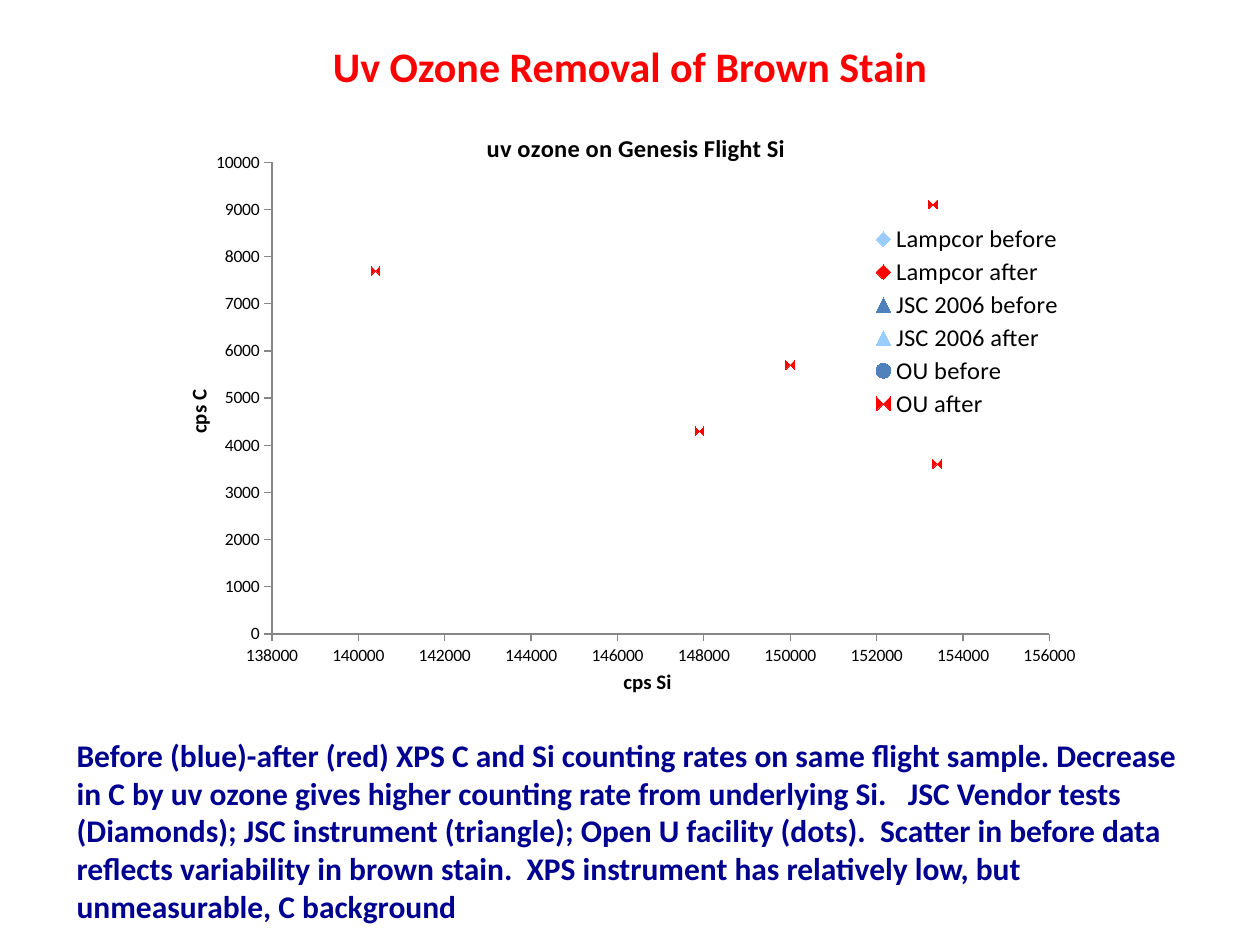
import pptx
import pptx.chart.data
import pptx.dml.color
import pptx.enum.chart
import pptx.enum.text
import pptx.oxml
import pptx.oxml.ns
import pptx.util

Inches = pptx.util.Inches
Pt = pptx.util.Pt
qn = pptx.oxml.ns.qn
Marker = pptx.enum.chart.XL_MARKER_STYLE

RED, BLUE, PALE_BLUE = "FF0000", "4F81BD", "99CCFF"
NAVY, BLACK, GRAY = "000090", "000000", "878787"

SERIES = [
    ("Lampcor before", Marker.DIAMOND, 11, PALE_BLUE, [(18000, 18000), (33000, 33000)]),
    ("Lampcor after", Marker.DIAMOND, 9, RED,
     [(42000, 16000), (42000, 15000), (46000, 15000), (46000, 14000)]),
    ("JSC 2006 before", Marker.TRIANGLE, 11, BLUE, [(51000, 63000)]),
    ("JSC 2006 after", Marker.TRIANGLE, 9, PALE_BLUE, [(99000, 11000)]),
    ("OU before", Marker.CIRCLE, 9, BLUE, [(98000, 65000), (131000, 20000)]),
    ("OU after", Marker.AUTOMATIC, 5, RED,
     [(153300, 9100), (153400, 3600), (140400, 7700), (147900, 4300), (150000, 5700)]),
]

BODY = (
    "Before (blue)-after (red) XPS C and Si counting rates on same flight sample. "
    "Decrease in C by uv ozone gives higher counting rate from underlying Si.   "
    "JSC Vendor tests (Diamonds); JSC instrument (triangle); Open U facility (dots).  "
    "Scatter in before data reflects variability in brown stain.  "
    "XPS instrument has relatively low, but unmeasurable, C background"
)


def rgb(value):
    return pptx.dml.color.RGBColor.from_string(value)


def set_layout(parent, x, y, w=None, h=None, inner=False):
    for old in parent.findall(qn("c:layout")):
        parent.remove(old)
    tags = [("layoutTarget", "inner")] if inner else []
    tags += [("xMode", "edge"), ("yMode", "edge")]
    tags += [(k, v) for k, v in zip("xywh", (x, y, w, h)) if v is not None]
    items = "".join(f'<c:{k} val="{v}"/>' for k, v in tags)
    layout = pptx.oxml.parse_xml(
        f'<c:layout {pptx.oxml.ns.nsdecls("c")}>'
        f"<c:manualLayout>{items}</c:manualLayout></c:layout>"
    )
    overlay = parent.find(qn("c:overlay"))
    if overlay is None:
        parent.insert(0, layout)
    else:
        overlay.addprevious(layout)


class SlideBuilder:
    font = "Calibri"

    def __init__(self, slide):
        self.s = slide

    def style(self, font, size, color, bold=False):
        font.name, font.size, font.bold = self.font, Pt(size), bold
        font.color.rgb = rgb(color)

    def text(self, box, text, size, color, align, anchor):
        sp = self.s.shapes.add_textbox(*map(Inches, box))
        tf = sp.text_frame
        tf.word_wrap, tf.vertical_anchor = True, anchor
        p = tf.paragraphs[0]
        p.text, p.alignment = text, align
        self.style(p.font, size, color, True)

    def chart_title(self, title, text, size, x, y):
        p = title.text_frame.paragraphs[0]
        p.text = text
        self.style(p.font, size, BLACK, True)
        set_layout(title._element, x, y)

    def axis(self, axis, low, high, step):
        axis.minimum_scale, axis.maximum_scale, axis.major_unit = low, high, step
        axis.has_major_gridlines = False
        axis.major_tick_mark = pptx.enum.chart.XL_TICK_MARK.OUTSIDE
        axis.minor_tick_mark = pptx.enum.chart.XL_TICK_MARK.NONE
        axis.format.line.color.rgb = rgb(GRAY)
        axis.format.line.width = Pt(0.75)
        axis.tick_labels.number_format = "0"
        axis.tick_labels.number_format_is_linked = False
        self.style(axis.tick_labels.font, 10, BLACK)

    def scatter(self, box, series):
        data = pptx.chart.data.XyChartData()
        for name, _, _, _, points in series:
            group = data.add_series(name)
            for x, y in points:
                group.add_data_point(x, y)
        chart = self.s.shapes.add_chart(
            pptx.enum.chart.XL_CHART_TYPE.XY_SCATTER, *map(Inches, box), data
        ).chart
        self.style(chart.font, 10, BLACK)
        plot = chart.plots[0]
        plot.vary_by_categories = False
        for ser, (_, symbol, size, color, _) in zip(plot.series, series):
            ser._element.get_or_add_smooth().val = False
            ser.format.line.fill.background()
            ser.marker.style, ser.marker.size = symbol, size
            ser.marker.format.fill.solid()
            ser.marker.format.fill.fore_color.rgb = rgb(color)
            ser.marker.format.line.color.rgb = rgb(color)
        chart.has_legend = True
        chart.legend.position = pptx.enum.chart.XL_LEGEND_POSITION.RIGHT
        chart.legend.include_in_layout = False
        self.style(chart.legend.font, 14, BLACK)
        return chart


def main():
    prs = pptx.Presentation()
    prs.slide_width, prs.slide_height = Inches(10), Inches(7.5)
    s = SlideBuilder(prs.slides.add_slide(prs.slide_layouts[6]))
    align, anchor = pptx.enum.text.PP_ALIGN, pptx.enum.text.MSO_ANCHOR

    s.text((0.5, 0.23, 9, 0.59), "Uv Ozone Removal of Brown Stain", 24, RED,
           align.CENTER, anchor.MIDDLE)

    chart = s.scatter((1.36, 0.82, 7.26, 4.74), SERIES)
    s.axis(chart.category_axis, 138000, 156000, 2000)
    s.axis(chart.value_axis, 0, 10000, 1000)
    s.chart_title(chart.chart_title, "uv ozone on Genesis Flight Si", 14, 0.34, 0.04)
    s.chart_title(chart.category_axis.axis_title, "cps Si", 12, 0.49, 0.95)
    s.chart_title(chart.value_axis.axis_title, "cps C", 12, 0.01, 0.48)
    set_layout(chart.legend._element, 0.76, 0.2, 0.22, 0.34)
    plot_area = chart._chartSpace.chart.plotArea
    set_layout(plot_area, 0.11, 0.1, 0.85, 0.8, inner=True)

    s.text((0.51, 5.79, 9.11, 1.62), BODY, 18, NAVY, align.LEFT, anchor.TOP)
    prs.save("out.pptx")


if __name__ == "__main__":
    main()
